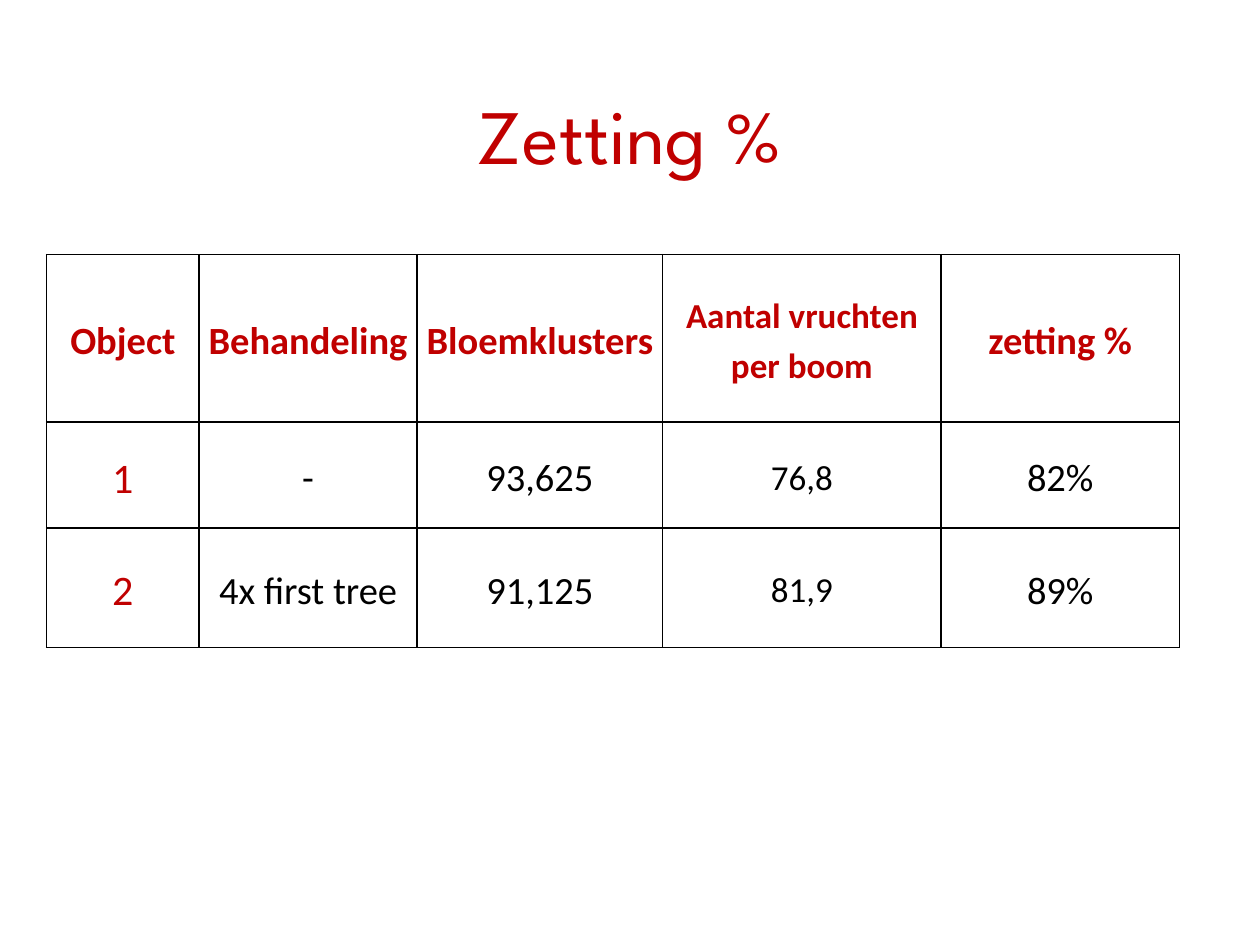
from dataclasses import dataclass

from lxml import etree
from pptx import Presentation
from pptx.dml.color import RGBColor
from pptx.enum.text import MSO_ANCHOR as Anchor, PP_ALIGN as Align
from pptx.oxml.ns import qn
from pptx.util import Inches, Pt


@dataclass(frozen=True)
class Theme:
    accent: RGBColor = RGBColor(0xC0, 0x00, 0x00)
    ink: RGBColor = RGBColor(0x00, 0x00, 0x00)
    title_font: str = "League Spartan"
    body_font: str = "Calibri"
    title_size: Pt = Pt(44)
    object_size: Pt = Pt(24)
    body_size: Pt = Pt(22)
    fruit_size: Pt = Pt(20)
    border: Pt = Pt(1)


theme = Theme()


def style_font(font, name, size, color, bold=False):
    font.name = name
    font.size = size
    font.bold = bold
    font.color.rgb = color


def add_borders(cell):
    properties = cell._tc.get_or_add_tcPr()
    # Border lines must come before the cell fill
    for position, side in enumerate(("lnL", "lnR", "lnT", "lnB")):
        line = etree.Element(qn(f"a:{side}"), w=str(theme.border))
        fill = etree.SubElement(line, qn("a:solidFill"))
        etree.SubElement(fill, qn("a:srgbClr"), val=str(theme.ink))
        properties.insert(position, line)


prs = Presentation()
prs.slide_width, prs.slide_height = Inches(10), Inches(7.5)
slide = prs.slides.add_slide(prs.slide_layouts[5])

# Title
title = slide.shapes.title
title.left, title.top = Inches(0.5), Inches(0.44)
title.width, title.height = Inches(9), Inches(1.25)
title.text_frame.text = "Zetting %"
title.text_frame.vertical_anchor = Anchor.MIDDLE
heading = title.text_frame.paragraphs[0]
heading.alignment = Align.CENTER
style_font(heading.runs[0].font, theme.title_font, theme.title_size, theme.accent)

# Fruit set table
results = [
    ["Object", "Behandeling", "Bloemklusters", "Aantal vruchten per boom", "zetting %"],
    ["1", "-", "93,625", "76,8", "82%"],
    ["2", "4x first tree", "91,125", "81,9", "89%"],
]
column_widths = [1.21, 1.73, 1.95, 2.21, 1.89]
row_heights = [1.33, 0.84, 0.95]
OBJECT_COLUMN, FRUIT_COLUMN = 0, 3

table = slide.shapes.add_table(
    len(results), len(column_widths), Inches(0.37), Inches(2.02),
    Inches(sum(column_widths)), Inches(sum(row_heights))).table
table.first_row = table.horz_banding = False
for column, width in zip(table.columns, column_widths):
    column.width = Inches(width)
for row, height in zip(table.rows, row_heights):
    row.height = Inches(height)

for r, values in enumerate(results):
    for c, value in enumerate(values):
        cell = table.cell(r, c)
        cell.fill.background()
        add_borders(cell)
        cell.vertical_anchor = Anchor.MIDDLE
        cell.margin_left = cell.margin_right = Inches(0.07)
        cell.margin_top = cell.margin_bottom = 0
        cell.text_frame.text = value

        # Headings and object numbers are red, measurements black
        is_header = r == 0
        size = theme.body_size
        if c == FRUIT_COLUMN:
            size = theme.fruit_size
        elif c == OBJECT_COLUMN and not is_header:
            size = theme.object_size
        color = theme.accent if is_header or c == OBJECT_COLUMN else theme.ink
        paragraph = cell.text_frame.paragraphs[0]
        paragraph.alignment = Align.CENTER
        paragraph.line_spacing = 1.15
        style_font(paragraph.runs[0].font, theme.body_font, size, color, is_header)

prs.save("out.pptx")
